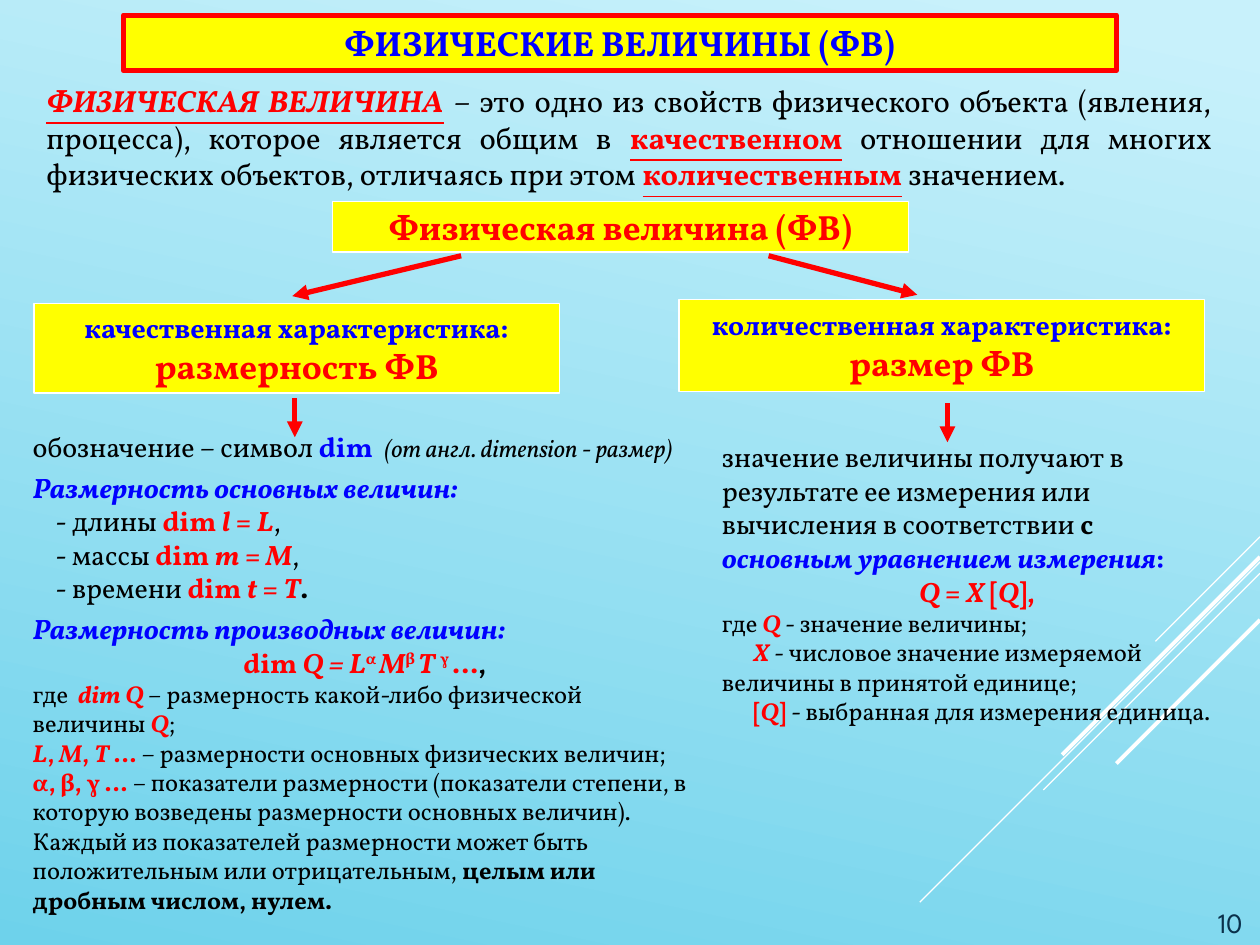
from dataclasses import dataclass

from lxml.etree import SubElement
from pptx import Presentation
from pptx.dml.color import RGBColor
from pptx.enum.shapes import MSO_CONNECTOR, MSO_SHAPE
from pptx.enum.text import MSO_ANCHOR, MSO_AUTO_SIZE, PP_ALIGN
from pptx.oxml.ns import qn
from pptx.util import Inches, Pt


@dataclass(frozen=True)
class Theme:
    """Colours, fonts and type sizes of the slide."""
    sky_light: RGBColor = RGBColor.from_string("C8F1FB")
    sky_dark: RGBColor = RGBColor.from_string("6ED2EB")
    white: RGBColor = RGBColor.from_string("FFFFFF")
    yellow: RGBColor = RGBColor.from_string("FFFF00")
    red: RGBColor = RGBColor.from_string("FF0000")
    blue: RGBColor = RGBColor.from_string("0000FF")
    black: RGBColor = RGBColor.from_string("000000")
    navy: RGBColor = RGBColor.from_string("0A304A")
    font: str = "Vollkorn"
    number_font: str = "League Spartan"
    heading: float = 20
    lead: float = 17.5
    body: float = 16
    small: float = 14


THEME = Theme()
LEFT, CENTER, RIGHT, JUSTIFY = PP_ALIGN.LEFT, PP_ALIGN.CENTER, PP_ALIGN.RIGHT, PP_ALIGN.JUSTIFY

DEFINITION = [
    ("ФИЗИЧЕСКАЯ ВЕЛИЧИНА", "red b i u"), (" ", "red b i"),
    ("– это одно из свойств физического объекта (явления, процесса), "
     "которое является общим в ", ""),
    ("качественном", "red b u"),
    (" отношении для многих физических объектов, отличаясь при этом ", ""),
    ("количественным", "red b u"), (" значением.", ""),
]

BASE_QUANTITIES = [
    ("длины", "l", "L", ",", ""),
    ("массы", "т", "М", ",", ""),
    ("времени", "t", "Т", ".", "b"),
]

QUALITY_NOTES = [
    [("где  ", ""), ("dim Q", "red b i"),
     (" – размерность какой-либо физической величины ", ""), ("Q", "red b i"), (";", "")],
    [("L", "red b i"), (", ", "red b"), ("M", "red b i"), (", ", "red b"),
     ("T ", "red b i"), ("… ", "red b"), ("– размерности основных физических величин;", "")],
    [("α, β, γ … ", "red b"),
     ("– показатели размерности (показатели степени, в которую возведены "
      "размерности основных величин).", "")],
    [("Каждый из показателей размерности может быть положительным или отрицательным,", ""),
     (" целым или дробным числом, нулем.", "b")],
]

DERIVED_FORMULA = [
    ("dim", "red b"), (" Q = L", "red b i"), ("α ", "red b sup"), ("M", "red b i"),
    ("β ", "red b sup"), ("T ", "red b i"), ("γ ", "red b sup"), ("…", "red b"), (",", "b"),
]

MEASUREMENT_FORMULA = [
    ("Q ", "red b i"), ("= ", "red b"), ("X", "red b i"),
    (" [", "red b"), ("Q", "red b i"), ("],", "red b"),
]


def place(shape, left, top, width, height):
    """Set the position and size of a shape in inches."""
    shape.left, shape.top = Inches(left), Inches(top)
    shape.width, shape.height = Inches(width), Inches(height)


def prepare_frame(shape, anchor=MSO_ANCHOR.TOP):
    """Give a shape a wrapping text frame of fixed size."""
    frame = shape.text_frame
    frame.word_wrap = True
    frame.auto_size = MSO_AUTO_SIZE.NONE
    frame.vertical_anchor = anchor
    return frame


def add_span(para, text, style, size, font=THEME.font):
    """Add one run; style names a colour and any of b, i, u, sup."""
    marks = style.split()
    span = para.add_run()
    span.text = text
    span.font.name, span.font.size = font, Pt(size)
    span.font.bold, span.font.italic = "b" in marks, "i" in marks
    span.font.underline = "u" in marks
    colour = next((mark for mark in marks if mark in ("red", "blue", "navy")), "black")
    span.font.color.rgb = getattr(THEME, colour)
    if "sup" in marks:
        span.font._element.set("baseline", "30000")


def add_para(frame, spans, size, align=LEFT, first_indent=0, before=0):
    """Add a paragraph without bullet, using the empty first one if free."""
    first = frame.paragraphs[0]
    para = frame.add_paragraph() if first.runs else first
    para.alignment = align
    para.space_before, para.space_after = Pt(before), Pt(0)
    para.line_spacing = 1.0
    properties = para._p.get_or_add_pPr()
    properties.set("marL", "0")
    properties.set("indent", str(Inches(first_indent)))
    SubElement(properties, qn("a:buNone"))
    for text, style in spans:
        add_span(para, text, style, size)


def paint(shape, line_colour, line_width):
    """Fill a shape yellow and outline it."""
    shape.fill.solid()
    shape.fill.fore_color.rgb = THEME.yellow
    shape.line.color.rgb = line_colour
    shape.line.width = Pt(line_width)


def add_panel(page, area, lines):
    """Add a yellow box with centred lines of (text, style, size)."""
    box = page.shapes.add_shape(MSO_SHAPE.RECTANGLE, *map(Inches, area))
    box.shadow.inherit = False
    paint(box, THEME.white, 0.75)
    frame = prepare_frame(box, MSO_ANCHOR.MIDDLE)
    for text, style, size in lines:
        add_para(frame, [(text, style)], size, CENTER)


def add_line(page, start, end, colour, width):
    """Add a straight line without shadow."""
    line = page.shapes.add_connector(MSO_CONNECTOR.STRAIGHT, *map(Inches, (*start, *end)))
    line.line.color.rgb = colour
    line.line.width = Pt(width)
    SubElement(line.element.spPr, qn("a:effectLst"))
    return line


def add_arrow(page, start, end):
    """Add a red arrow from start to end."""
    arrow = add_line(page, start, end, THEME.red, 3)
    SubElement(arrow.line._get_or_add_ln(), qn("a:tailEnd"), type="triangle")


def decorate(page):
    """Paint the sky gradient and the diagonal strokes behind all else."""
    fill = page.background.fill
    fill.gradient()
    fill.gradient_angle = 258
    for stop, colour, position in zip(
            fill.gradient_stops, (THEME.sky_light, THEME.sky_dark), (0.04, 1)):
        stop.color.rgb, stop.position = colour, position
    strokes = [(4.26, 0.83, 0.75), (4.46, 2.7, 0.75), (4.55, 1.72, 0.75),
               (4.42, 1.57, 2.25), (4.92, 1.14, 2.25)]
    for top, reach, width in strokes:
        stroke = add_line(page, (10, top), (10 - reach, top + reach), THEME.white, width)
        page.shapes.element.insert(2, stroke.element)


def write_quality(frame):
    """Write the column on dimensions."""
    size = THEME.body
    add_para(frame, [("обозначение – символ ", ""), ("dim  ", "blue b")], size)
    add_span(frame.paragraphs[0], "(от англ. dimension - размер)", "i", THEME.small)
    add_para(frame, [("Размерность основных величин:", "blue b i")], size, before=4)
    for name, symbol, dimension, mark, mark_style in BASE_QUANTITIES:
        add_para(frame, [(f"- {name} ", ""), ("dim ", "red b"), (symbol, "red b i"),
                         (" = ", "red b"), (dimension, "red b i"), (mark, mark_style)],
                 size, first_indent=0.18)
    add_para(frame, [("Размерность производных величин:", "blue b i")], size, before=4)
    add_para(frame, DERIVED_FORMULA, size, CENTER)
    for spans in QUALITY_NOTES:
        add_para(frame, spans, THEME.small)


def write_quantity(frame):
    """Write the column on measured values."""
    add_para(frame, [("значение величины получают в результате ее измерения или "
                      "вычисления в соответствии ", ""), ("с", "b")], THEME.body)
    add_para(frame, [("основным уравнением измерения", "blue b i"), (":", "blue b")], THEME.body)
    add_para(frame, MEASUREMENT_FORMULA, THEME.body, CENTER)
    add_para(frame, [("где ", ""), ("Q", "red b i"), (" - значение величины;", "")],
             THEME.small, JUSTIFY)
    add_para(frame, [("X ", "red b i"),
                     ("- числовое значение измеряемой величины в принятой единице;", "")],
             THEME.small, first_indent=0.25)
    add_para(frame, [("[", "red b"), ("Q", "red b i"), ("] ", "red b"),
                     ("- выбранная для измерения единица.", "")],
             THEME.small, first_indent=0.25)


def main():
    """Build the slide and save it."""
    deck = Presentation()
    deck.slide_width, deck.slide_height = Inches(10), Inches(7.5)
    page = deck.slides.add_slide(deck.slide_layouts[3])
    decorate(page)

    title, quality, quantity = page.placeholders
    place(title, 0.98, 0.12, 7.88, 0.44)
    paint(title, THEME.red, 3)
    add_para(prepare_frame(title, MSO_ANCHOR.MIDDLE),
             [("ФИЗИЧЕСКИЕ ВЕЛИЧИНЫ (ФВ)", "blue b")], THEME.heading, CENTER)
    place(quality, 0.16, 3.36, 5.47, 4.1)
    write_quality(prepare_frame(quality))
    place(quantity, 5.63, 3.44, 4.25, 2.39)
    write_quantity(prepare_frame(quantity))

    definition = page.shapes.add_textbox(*map(Inches, (0.27, 0.6, 9.45, 0.98)))
    add_para(prepare_frame(definition), DEFINITION, THEME.lead, JUSTIFY)

    add_panel(page, (2.64, 1.6, 4.57, 0.4),
              [("Физическая величина (ФВ)", "red b", THEME.heading)])
    add_panel(page, (0.27, 2.41, 4.17, 0.71),
              [("качественная характеристика:", "blue b", THEME.body),
               ("размерность ФВ", "red b", THEME.heading)])
    add_panel(page, (5.39, 2.38, 4.17, 0.73),
              [("количественная характеристика:", "blue b", THEME.body),
               ("размер ФВ", "red b", THEME.heading)])
    for start, end in [((3.66, 2.03), (2.32, 2.35)), ((6.1, 2.03), (7.28, 2.34)),
                       ((2.34, 3.16), (2.34, 3.47)), ((7.52, 3.2), (7.52, 3.51))]:
        add_arrow(page, start, end)

    number = page.shapes.add_textbox(*map(Inches, (9.02, 6.77, 0.94, 0.73)))
    para = prepare_frame(number, MSO_ANCHOR.BOTTOM).paragraphs[0]
    para.alignment = RIGHT
    add_span(para, "10", "navy", THEME.body, THEME.number_font)
    deck.save("out.pptx")


if __name__ == "__main__":
    main()
